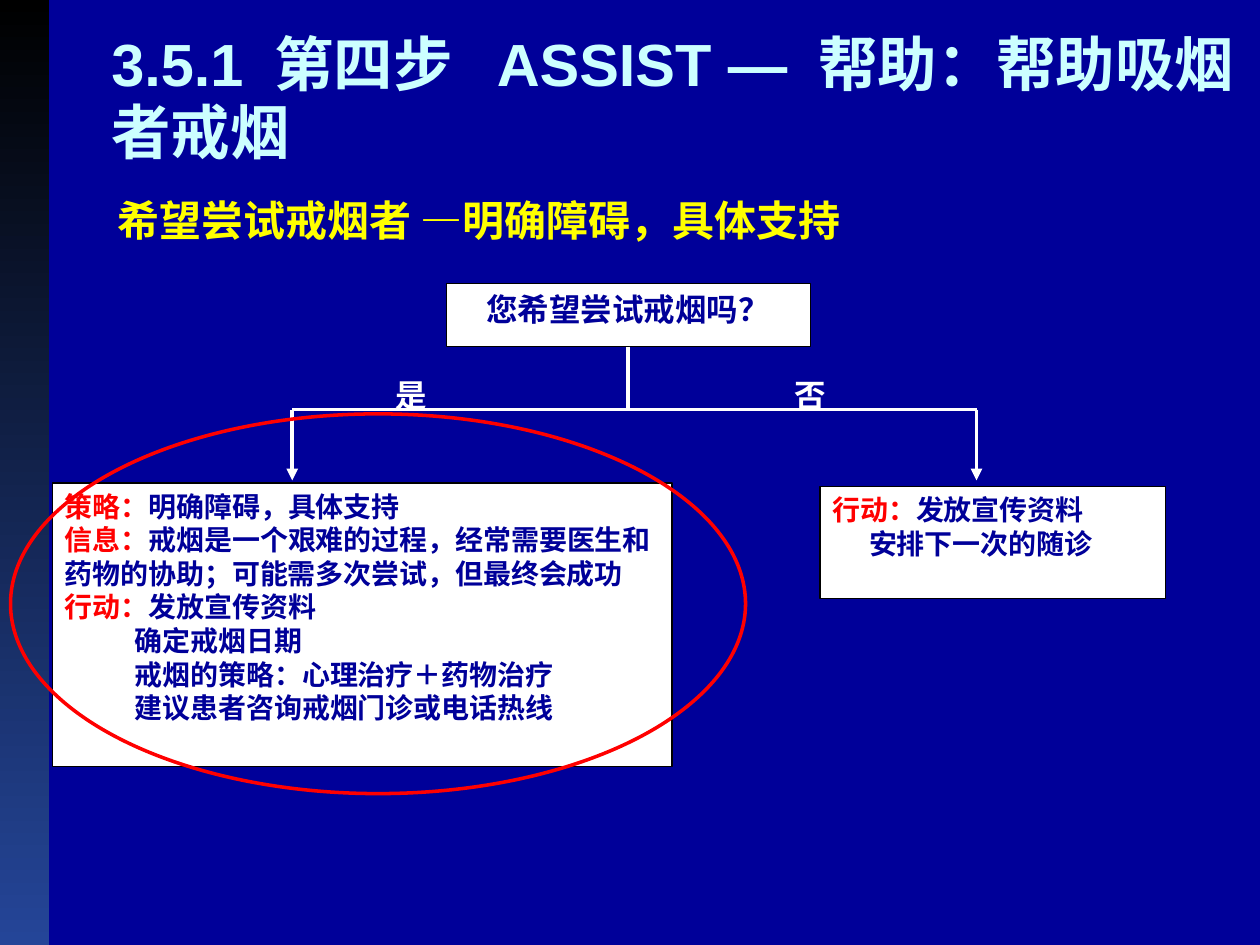
from dataclasses import dataclass
from typing import Optional

from lxml import etree
from pptx import Presentation
from pptx.dml.color import RGBColor
from pptx.enum import shapes, text
from pptx.oxml import ns
from pptx.util import Pt


@dataclass(frozen=True)
class Theme:
    navy: str = "000099"
    white: str = "FFFFFF"
    black: str = "000000"
    red: str = "FF0000"
    yellow: str = "FFFF00"
    pale: str = "CCFFFF"
    strip_end: str = "244598"
    title: float = 34
    subtitle: float = 24
    question: float = 18
    detail: float = 16
    sans: str = "Arial"
    serif: str = "Times New Roman"
    cjk: str = "Noto Sans CJK SC"


THEME = Theme()
ALIGN = text.PP_ALIGN


@dataclass(frozen=True)
class Run:
    words: str
    color: str
    font: str = THEME.sans
    size: float = THEME.detail
    spacing: float = 0  # extra character spacing, points


@dataclass(frozen=True)
class Line:
    runs: tuple[Run, ...]
    align: ALIGN = ALIGN.LEFT
    indent: float = 0
    spacing: float = 1.0


@dataclass(frozen=True)
class Box:
    left: float
    top: float
    width: float
    height: float
    lines: tuple[Line, ...]
    framed: bool = True
    wrap: bool = True
    anchor: text.MSO_ANCHOR = text.MSO_ANCHOR.TOP
    insets: tuple[float, float] = (7.2, 7.2)  # left, right


@dataclass(frozen=True)
class Link:
    start: tuple[float, float]
    end: tuple[float, float]
    weight: float = 2
    arrow: bool = False


def rgb(value: str) -> RGBColor:
    return RGBColor.from_string(value)


def apply(target, values: dict) -> None:
    for name, value in values.items():
        setattr(target, name, value)


def write(frame, box: Box) -> None:
    apply(frame, {
        "word_wrap": box.wrap,
        "vertical_anchor": box.anchor,
        "margin_left": Pt(box.insets[0]),
        "margin_right": Pt(box.insets[1]),
    })
    for index, line in enumerate(box.lines):
        para = frame.add_paragraph() if index else frame.paragraphs[0]
        apply(para, {"alignment": line.align, "line_spacing": line.spacing})
        if line.indent:
            para._p.get_or_add_pPr().set("marL", str(Pt(line.indent)))
        for part in line.runs:
            run = para.add_run()
            run.text = part.words
            apply(run.font, {"name": part.font, "size": Pt(part.size), "bold": True})
            run.font.color.rgb = rgb(part.color)
            if part.spacing:
                run.font._element.set("spc", str(int(part.spacing * 100)))


def add_box(slide, box: Box):
    place = [Pt(n) for n in (box.left, box.top, box.width, box.height)]
    if box.framed:
        shape = slide.shapes.add_shape(shapes.MSO_SHAPE.RECTANGLE, *place)
        shape.shadow.inherit = False
        shape.fill.solid()
        shape.fill.fore_color.rgb = rgb(THEME.white)
        shape.line.color.rgb = rgb(THEME.black)
        shape.line.width = Pt(0.75)
    else:
        shape = slide.shapes.add_textbox(*place)
    write(shape.text_frame, box)
    return shape


def add_link(slide, link: Link):
    connector = slide.shapes.add_connector(
        shapes.MSO_CONNECTOR.STRAIGHT, *[Pt(n) for n in link.start + link.end])
    connector.line.color.rgb = rgb(THEME.white)
    connector.line.width = Pt(link.weight)
    if link.arrow:
        etree.SubElement(connector.line._get_or_add_ln(), ns.qn("a:tailEnd"), type="triangle")
    etree.SubElement(connector._element.spPr, ns.qn("a:effectLst"))
    return connector


def add_strip(slide) -> None:
    strip = slide.shapes.add_shape(shapes.MSO_SHAPE.RECTANGLE, 0, 0, Pt(28), Pt(540))
    strip.shadow.inherit = False
    strip.line.fill.background()
    strip.fill.gradient()
    strip.fill.gradient_angle = 270
    for stop, color in zip(strip.fill.gradient_stops, (THEME.black, THEME.strip_end)):
        stop.color.rgb = rgb(color)


def add_highlight(slide) -> None:
    ring = slide.shapes.add_shape(
        shapes.MSO_SHAPE.OVAL, Pt(6), Pt(236.5), Pt(420), Pt(217))
    ring.shadow.inherit = False
    ring.fill.background()
    ring.line.color.rgb = rgb(THEME.red)
    ring.line.width = Pt(2)


def entry(head: str, body: str, font: str = THEME.sans, body_font: str = THEME.sans) -> Line:
    return Line((Run(head, THEME.red, font), Run(body, THEME.navy, body_font)))


def step(words: str) -> Line:
    return Line((Run(words, THEME.navy),), indent=40)


def centred(words: str, color: str) -> tuple[Line, ...]:
    return (Line((Run(words, color, THEME.serif, THEME.question),), ALIGN.CENTER),)


# Flowchart content
QUESTION = Box(255, 162, 208, 36, centred("您希望尝试戒烟吗？", THEME.navy))
NO_ACTION = Box(468.5, 278, 197.5, 64, (
    entry("行动：", "发放宣传资料", THEME.serif, THEME.cjk),
    Line((Run("安排下一次的随诊", THEME.navy, THEME.cjk),), ALIGN.JUSTIFY, 21),
))
YES_ACTION = Box(30, 276, 354, 162, (
    entry("策略：", "明确障碍，具体支持"),
    entry("信息：", "戒烟是一个艰难的过程，经常需要医生和药物的协助；可能需多次尝试，但最终会成功"),
    entry("行动：", "发放宣传资料"),
    step("确定戒烟日期"),
    step("戒烟的策略：心理治疗＋药物治疗"),
    step("建议患者咨询戒烟门诊或电话热线"),
))
ANSWERS = [Box(left, 211.5, 37.5, 22.5, centred(word, THEME.white), framed=False)
           for left, word in ((444, "否"), (216, "是"))]

# Branch lines
YES_X, STEM_X, NO_X = 167, 359, 558
BRANCH_Y, ARROW_Y = 234, 274.5
STEM = Link((STEM_X, 198), (STEM_X, BRANCH_Y))
BRANCHES = [Link((YES_X, BRANCH_Y), (NO_X, BRANCH_Y))] + [
    Link((x, BRANCH_Y), (x, ARROW_Y), 2.25, True) for x in (YES_X, NO_X)]

# Headings
TITLE = Box(60, 14.5, 671, 85, (Line((
    Run("3.5.1 第四步", THEME.pale, size=THEME.title),
    Run(" ", THEME.pale, size=THEME.title, spacing=9.5),
    Run("ASSIST — 帮助：帮助吸烟者戒烟", THEME.pale, size=THEME.title),
), spacing=0.95),), framed=False, anchor=text.MSO_ANCHOR.MIDDLE, insets=(3.6, 0.7))
SUBTITLE = Box(60, 104.5, 429, 39, (Line((
    Run("希望尝试戒烟者 ―明确障碍，具体支持", THEME.yellow, size=THEME.subtitle),
), spacing=1.1),), framed=False, wrap=False)


def main() -> None:
    deck = Presentation()
    apply(deck, {"slide_width": Pt(720), "slide_height": Pt(540)})
    slide = deck.slides.add_slide(deck.slide_layouts[6])
    slide.background.fill.solid()
    slide.background.fill.fore_color.rgb = rgb(THEME.navy)

    add_strip(slide)
    question = add_box(slide, QUESTION)
    for box in (NO_ACTION, YES_ACTION, *ANSWERS):
        add_box(slide, box)
    add_link(slide, STEM).begin_connect(question, 2)
    for link in BRANCHES:
        add_link(slide, link)
    add_highlight(slide)
    for box in (TITLE, SUBTITLE):
        add_box(slide, box)

    deck.save("out.pptx")


if __name__ == "__main__":
    main()
